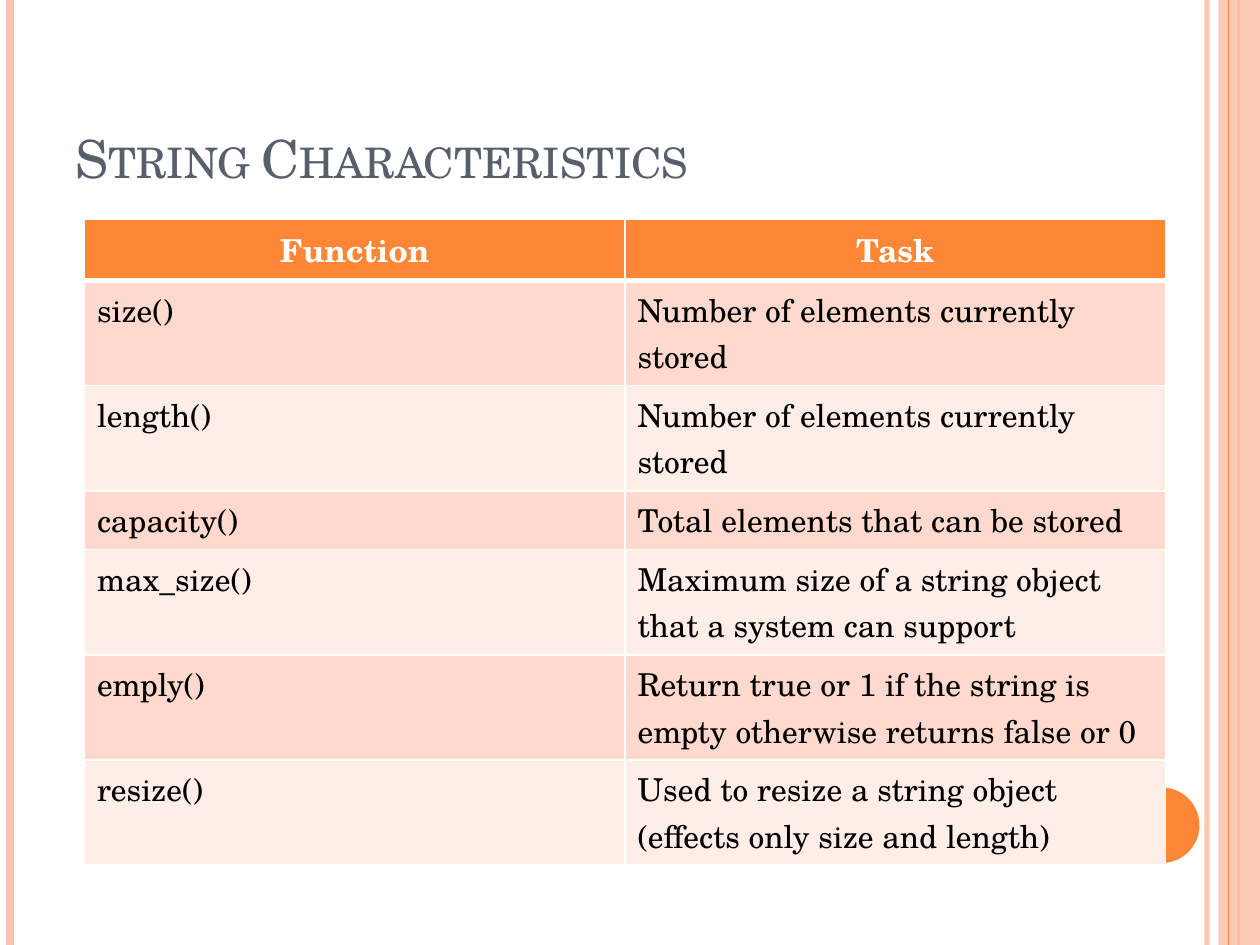
"""Build the String Characteristics slide with its table of functions."""
from lxml import etree
from pptx import Presentation
from pptx.dml.color import RGBColor
from pptx.enum.shapes import MSO_CONNECTOR, MSO_SHAPE
from pptx.enum.text import MSO_ANCHOR, PP_ALIGN
from pptx.oxml.ns import qn
from pptx.util import Inches, Pt

STRAIGHT = MSO_CONNECTOR.STRAIGHT
RECTANGLE, OVAL = MSO_SHAPE.RECTANGLE, MSO_SHAPE.OVAL
BOTTOM = MSO_ANCHOR.BOTTOM
LEFT, CENTER = PP_ALIGN.LEFT, PP_ALIGN.CENTER
FONT = "TeX Gyre Schola"
COLORS = {
    "white": "FFFFFF", "black": "000000", "slate": "575F6D", "orange": "FE8637",
    "peach": "FEC3AE", "dark band": "FFD9CE", "light band": "FFEDE8",
}


def write_text(frame, text, size=18, color="black", bold=False, align=LEFT, small_caps=False):
    paragraph = frame.paragraphs[0]
    paragraph.alignment = align
    run = paragraph.add_run()
    run.text = text
    run.font.name = FONT
    run.font.size = Pt(size)
    run.font.bold = bold
    run.font.color.rgb = RGBColor.from_string(COLORS[color])
    if small_caps:
        run.font._element.set("cap", "small")


def paint(fill, color, opacity=100):
    fill.solid()
    fill.fore_color.rgb = RGBColor.from_string(COLORS[color])
    if opacity < 100:
        color_element = fill._xPr.find(qn("a:solidFill"))[0]
        etree.SubElement(color_element, qn("a:alpha"), val=str(opacity * 1000))


presentation = Presentation()
presentation.slide_width, presentation.slide_height = Inches(10), Inches(7.5)
slide = presentation.slides.add_slide(presentation.slide_layouts[5])
shapes = slide.shapes

title = shapes.title
title.left, title.top, title.width, title.height = map(Inches, (0.5, 0.3, 8.17, 1.25))
title.text_frame.vertical_anchor = BOTTOM
title.text_frame.word_wrap = True
write_text(title.text_frame, "String Characteristics", size=30, color="slate", small_caps=True)

side_decorations = [
    ("stripe", 9.58, 3, "peach", 93),
    ("stripe", 0.08, 4.5, "peach", 100),
    ("stripe", 9.83, 1.5, "orange", 100),
    (RECTANGLE, (9.67, 0, 0.33, 7.5), None, "peach", 87),
    ("stripe", 9.75, 0.75, "orange", 100),
    (OVAL, (8.92, 6.25, 0.6, 0.6), None, "orange", 100),
]
for kind, place, weight, color, opacity in side_decorations:
    if kind == "stripe":
        stripe = shapes.add_connector(
            STRAIGHT, Inches(place), 0, Inches(place), presentation.slide_height)
        stripe.line.width = Pt(weight)
        paint(stripe.line.fill, color, opacity)
        etree.SubElement(stripe._element.spPr, qn("a:effectLst"))
    else:
        shape = shapes.add_shape(kind, *map(Inches, place))
        shape.shadow.inherit = False
        shape.line.fill.background()
        paint(shape.fill, color, opacity)

table_rows = [
    (0.46, "Function", "Task"),
    (0.46, "size()", "Number of elements currently stored"),
    (0.46, "length()", "Number of elements currently stored"),
    (0.46, "capacity()", "Total elements that can be stored"),
    (0.8, "max_size()", "Maximum size of a string object that a system can support"),
    (0.8, "emply()", "Return true or 1 if the string is empty otherwise returns false or 0"),
    (0.8, "resize()", "Used to resize a string object (effects only size and length)"),
]
table = shapes.add_table(
    len(table_rows), 2, Inches(0.67), Inches(1.74), Inches(8.58), Inches(4.73)).table
for row_index, (height, *texts) in enumerate(table_rows):
    table.rows[row_index].height = Inches(height)
    is_header = row_index == 0
    band = "orange" if is_header else ("light band", "dark band")[row_index % 2]
    for column_index, text in enumerate(texts):
        cell = table.cell(row_index, column_index)
        properties = cell._tc.get_or_add_tcPr()
        for side in "LRTB":
            thick = (side == "B" and is_header) or (side == "T" and row_index == 1)
            border = etree.SubElement(
                properties, qn(f"a:ln{side}"), w=str(Pt(3 if thick else 1)))
            border_fill = etree.SubElement(border, qn("a:solidFill"))
            etree.SubElement(border_fill, qn("a:srgbClr"), val=COLORS["white"])
        paint(cell.fill, band)
        write_text(cell.text_frame, text, bold=is_header,
                   color="white" if is_header else "black",
                   align=CENTER if is_header else LEFT)

presentation.save("out.pptx")
